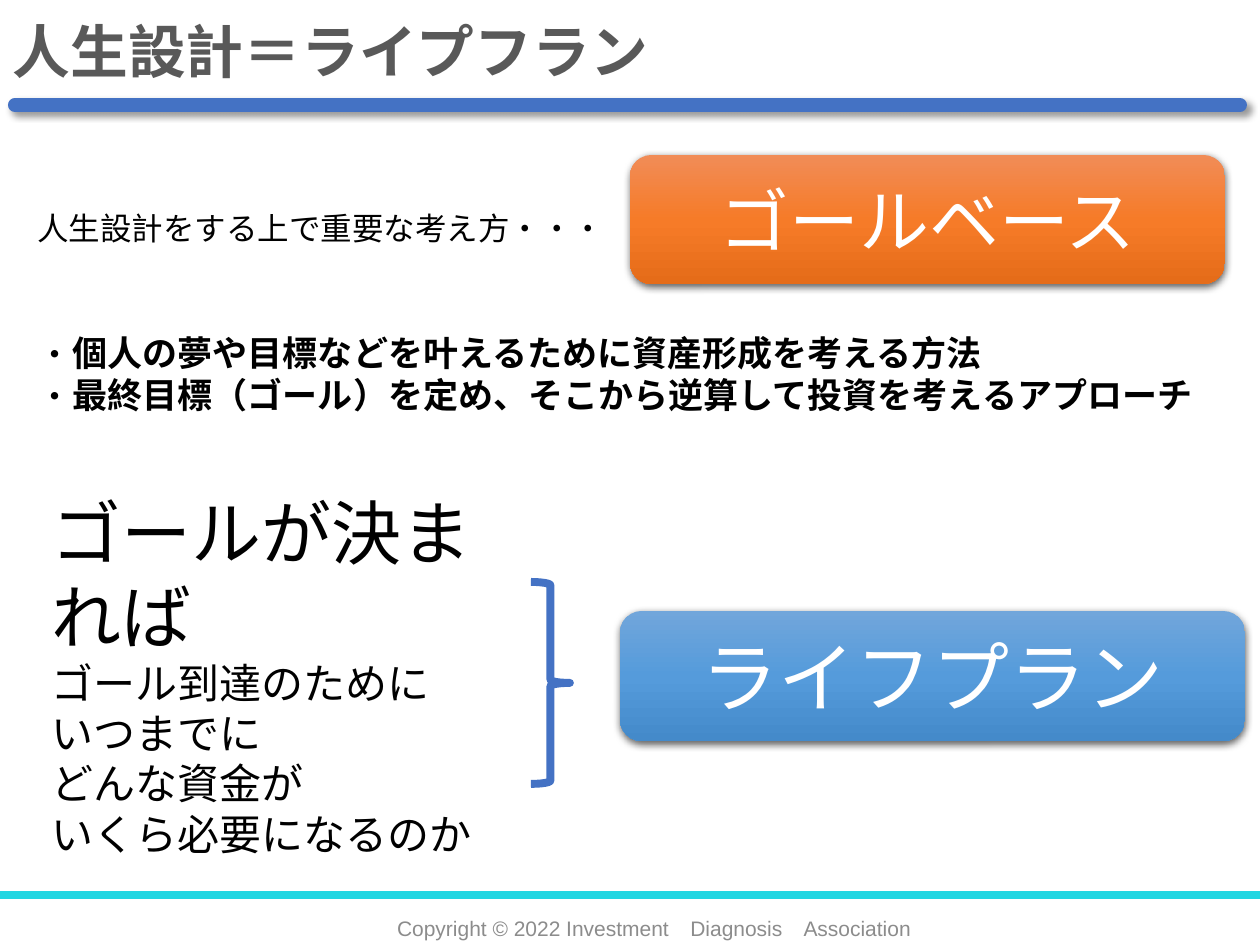
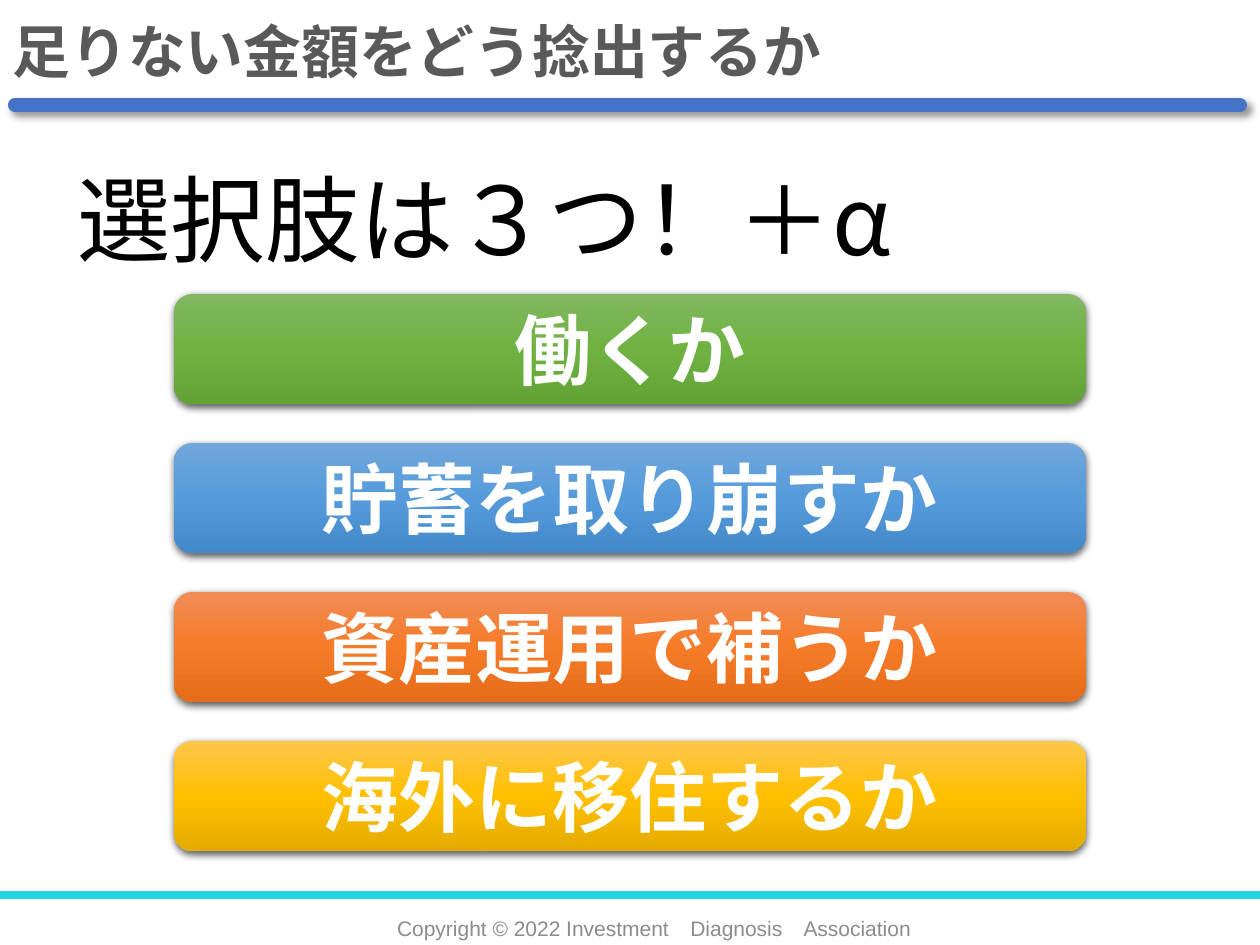
from copy import deepcopy

from lxml.etree import SubElement
from pptx import Presentation
from pptx.dml.color import RGBColor
from pptx.enum.shapes import MSO_CONNECTOR, MSO_SHAPE
from pptx.enum.text import MSO_ANCHOR, MSO_AUTO_SIZE, PP_ALIGN
from pptx.oxml.ns import qn
from pptx.util import Emu, Pt

PX_PER_INCH = 126
SLIDE_WIDTH, SLIDE_HEIGHT = 1260, 945
TITLE_AND_LIST, TITLE_ONLY = 1, 5

JAPANESE_FONT = "Noto Sans CJK JP"
FOOTER_FONT = "Arial"
BLACK, WHITE = "000000", "FFFFFF"
TITLE_GREY, TITLE_OUTLINE = "595959", "C0CBF0"
FOOTER_GREY, FOOTER_CYAN = "8C8C8C", "22D6E2"
RULE_BLUE = "4472C4"

GREEN = ("81B861", "6FB242", "62A336")
BLUE = ("71A6DB", "559BDB", "448ACA")
ORANGE = ("F18C57", "F67B28", "E56C19")
YELLOW = ("FFC64B", "FFC000", "E3AB00")

# alpha in percent, blur and distance in points, direction in degrees
BUTTON_SHADOW = (63, 4.5, 1.5, 90)
RULE_SHADOW = (40, 4, 3, 45)


def px(value):
    return Emu(round(value * 914400 / PX_PER_INCH))


def color(hex_string):
    return RGBColor.from_string(hex_string)


def place(shape, box):
    shape.left, shape.top, shape.width, shape.height = map(px, box)


def set_shadow(shape, shadow=None):
    """Give the shape this outer shadow, or none at all."""
    effects = SubElement(shape.element.spPr, qn("a:effectLst"))
    if shadow:
        alpha, blur, distance, direction = shadow
        outer = SubElement(effects, qn("a:outerShdw"), blurRad=str(Pt(blur)),
                           dist=str(Pt(distance)), dir=str(direction * 60000),
                           algn="ctr", rotWithShape="0")
        black = SubElement(outer, qn("a:srgbClr"), val=BLACK)
        SubElement(black, qn("a:alpha"), val=str(alpha * 1000))


def set_gradient(shape, stop_colors):
    """Fill from top to bottom with three evenly spaced colours."""
    shape.fill.gradient()
    shape.fill.gradient_angle = 270
    stop_list = shape.element.spPr.find(qn("a:gradFill")).find(qn("a:gsLst"))
    stop_list.insert(1, deepcopy(stop_list[0]))
    for index, (stop, hex_string) in enumerate(
            zip(shape.fill.gradient_stops, stop_colors)):
        stop.position = index / 2
        stop.color.rgb = color(hex_string)


def write(shape, text, size, font=JAPANESE_FONT, fill=BLACK, bold=False,
          align=PP_ALIGN.LEFT, line_spacing=None, outline=None, bullet=None):
    """Add one paragraph to the shape, using its empty first one if it can."""
    frame = shape.text_frame
    paragraph = frame.add_paragraph() if frame.text else frame.paragraphs[0]
    paragraph.alignment = align
    paragraph.space_before = Pt(0)
    if line_spacing:
        paragraph.line_spacing = line_spacing
    if bullet:
        properties = paragraph._p.get_or_add_pPr()
        properties.set("marL", str(Pt(size)))
        properties.set("indent", str(-Pt(size)))
        SubElement(properties, qn("a:buFont"), typeface=font)
        SubElement(properties, qn("a:buChar"), char=bullet)
    run = paragraph.add_run()
    run.text = text
    run.font.size = Pt(size)
    run.font.bold = bold
    run.font.color.rgb = color(fill)
    run.font.name = font
    run_properties = run._r.get_or_add_rPr()
    SubElement(run_properties, qn("a:ea"), typeface=font)
    if outline:
        line = SubElement(run_properties, qn("a:ln"), w=str(Pt(0.75)))
        SubElement(SubElement(line, qn("a:solidFill")), qn("a:srgbClr"), val=outline)
        run_properties.insert(0, line)


def add_text_box(slide, box):
    shape = slide.shapes.add_textbox(*map(px, box))
    shape.text_frame.word_wrap = True
    return shape


def add_rule(slide, left, right, y, width, hex_string, shadow=None, round_ends=False):
    rule = slide.shapes.add_connector(
        MSO_CONNECTOR.STRAIGHT, px(left), px(y), px(right), px(y))
    rule.line.color.rgb = color(hex_string)
    rule.line.width = Pt(width)
    if round_ends:
        rule.element.spPr.find(qn("a:ln")).set("cap", "rnd")
    set_shadow(rule, shadow)


def add_button(slide, box, text, colors, size, bold=False):
    button = slide.shapes.add_shape(MSO_SHAPE.ROUNDED_RECTANGLE, *map(px, box))
    set_gradient(button, colors)
    button.line.fill.background()
    set_shadow(button, BUTTON_SHADOW)
    button.text_frame.word_wrap = True
    button.text_frame.vertical_anchor = MSO_ANCHOR.MIDDLE
    write(button, text, size, fill=WHITE, bold=bold, align=PP_ALIGN.CENTER)


def add_footer(slide):
    footer = add_text_box(slide, (321, 917, 666, 22))
    frame = footer.text_frame
    frame.margin_left = frame.margin_right = frame.margin_top = frame.margin_bottom = 0
    frame.vertical_anchor = MSO_ANCHOR.MIDDLE
    write(footer, "Copyright © 2022 Investment　Diagnosis　Association", 12,
          font=FOOTER_FONT, fill=FOOTER_GREY, align=PP_ALIGN.CENTER)
    add_rule(slide, 0, SLIDE_WIDTH, 895, 5, FOOTER_CYAN)


def add_framed_slide(presentation, layout, title_text):
    """Add a slide with its title, title rule and footer."""
    slide = presentation.slides.add_slide(presentation.slide_layouts[layout])
    title = slide.shapes.title
    place(title, (0, -24, 1184, 158))
    title.text_frame.auto_size = MSO_AUTO_SIZE.NONE
    title.text_frame.vertical_anchor = MSO_ANCHOR.MIDDLE
    write(title, title_text, 33, fill=TITLE_GREY, bold=True, line_spacing=0.9,
          outline=TITLE_OUTLINE)
    add_rule(slide, 15, 1240, 105, 8, RULE_BLUE, RULE_SHADOW, round_ends=True)
    add_footer(slide)
    return slide


def add_goal_base(slide, box):
    """The lead-in, the goal-base button beside it and its two points below."""
    left, top, width, height = box
    lead_in = add_text_box(slide, (left, top + 48, 605, 50))
    write(lead_in, "人生設計をする上で重要な考え方・・・", 18)
    add_button(slide, (left + 605, top, 595, 129), "ゴールベース", ORANGE, 40)

    points = slide.placeholders[1]
    place(points, (left, top + 170, width, height - 170))
    points.text_frame.auto_size = MSO_AUTO_SIZE.NONE
    for point in ("個人の夢や目標などを叶えるために資産形成を考える方法",
                  "最終目標（ゴール）を定め、そこから逆算して投資を考えるアプローチ"):
        write(points, point, 20, bold=True, bullet="・")


def add_life_plan(slide, box):
    """The questions a goal raises, braced together into the life plan."""
    left, top, width, height = box
    questions = add_text_box(slide, (left, top, 512, height))
    write(questions, "ゴールが決まれば", 40)
    for line in ("ゴール到達のために", "いつまでに", "どんな資金が", "いくら必要になるのか"):
        write(questions, line, 24)

    brace = slide.shapes.add_shape(
        MSO_SHAPE.RIGHT_BRACE, px(left + 492), px(top + 99), px(39), px(202))
    brace.fill.background()
    brace.line.color.rgb = color(RULE_BLUE)
    brace.line.width = Pt(4.5)
    set_shadow(brace)

    button_width = 625
    add_button(slide, (left + width - button_width, top + 128, button_width, 130),
               "ライフプラン", BLUE, 44)


def add_options(slide, box, options):
    """Equal buttons stacked from the top to the bottom of the box."""
    left, top, width, height = box
    button_height = 110
    pitch = (height - button_height) / (len(options) - 1)
    for index, (text, colors) in enumerate(options):
        add_button(slide, (left, top + index * pitch, width, button_height),
                   text, colors, 44, bold=True)


def build_life_plan_slide(presentation):
    slide = add_framed_slide(presentation, TITLE_AND_LIST, "人生設計＝ライプフラン")
    add_goal_base(slide, (25, 155, 1211, 267))
    add_life_plan(slide, (39, 483, 1206, 301))


def build_options_slide(presentation):
    slide = add_framed_slide(presentation, TITLE_ONLY, "足りない金額をどう捻出するか")
    heading = add_text_box(slide, (64, 155, 1120, 127))
    write(heading, "選択肢は３つ！＋α", 54)
    add_options(slide, (174, 294, 912, 557), (
        ("働くか", GREEN),
        ("貯蓄を取り崩すか", BLUE),
        ("資産運用で補うか", ORANGE),
        ("海外に移住するか", YELLOW),
    ))


def main():
    presentation = Presentation()
    presentation.slide_width = px(SLIDE_WIDTH)
    presentation.slide_height = px(SLIDE_HEIGHT)
    build_life_plan_slide(presentation)
    build_options_slide(presentation)
    presentation.save("out.pptx")


if __name__ == "__main__":
    main()
